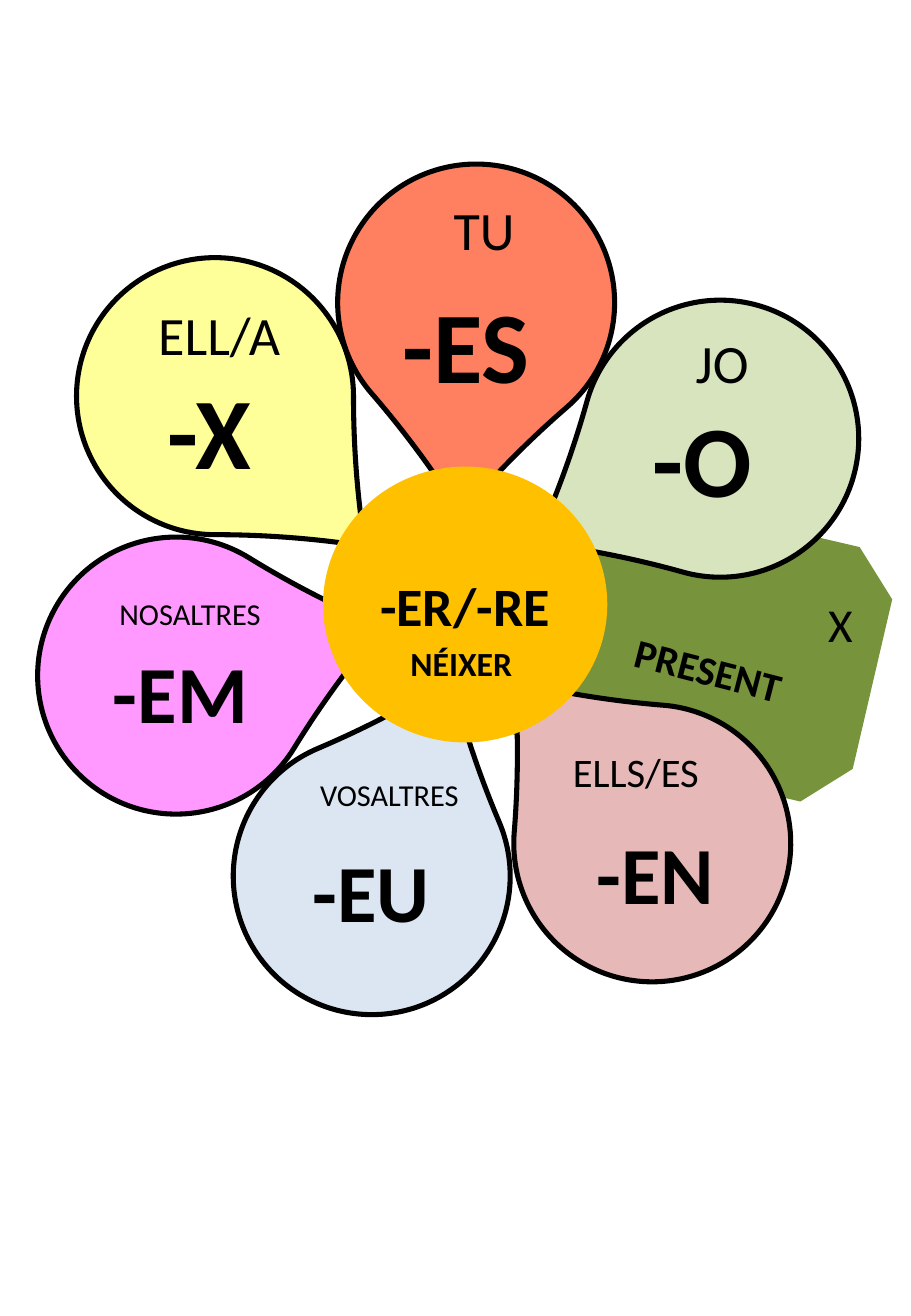
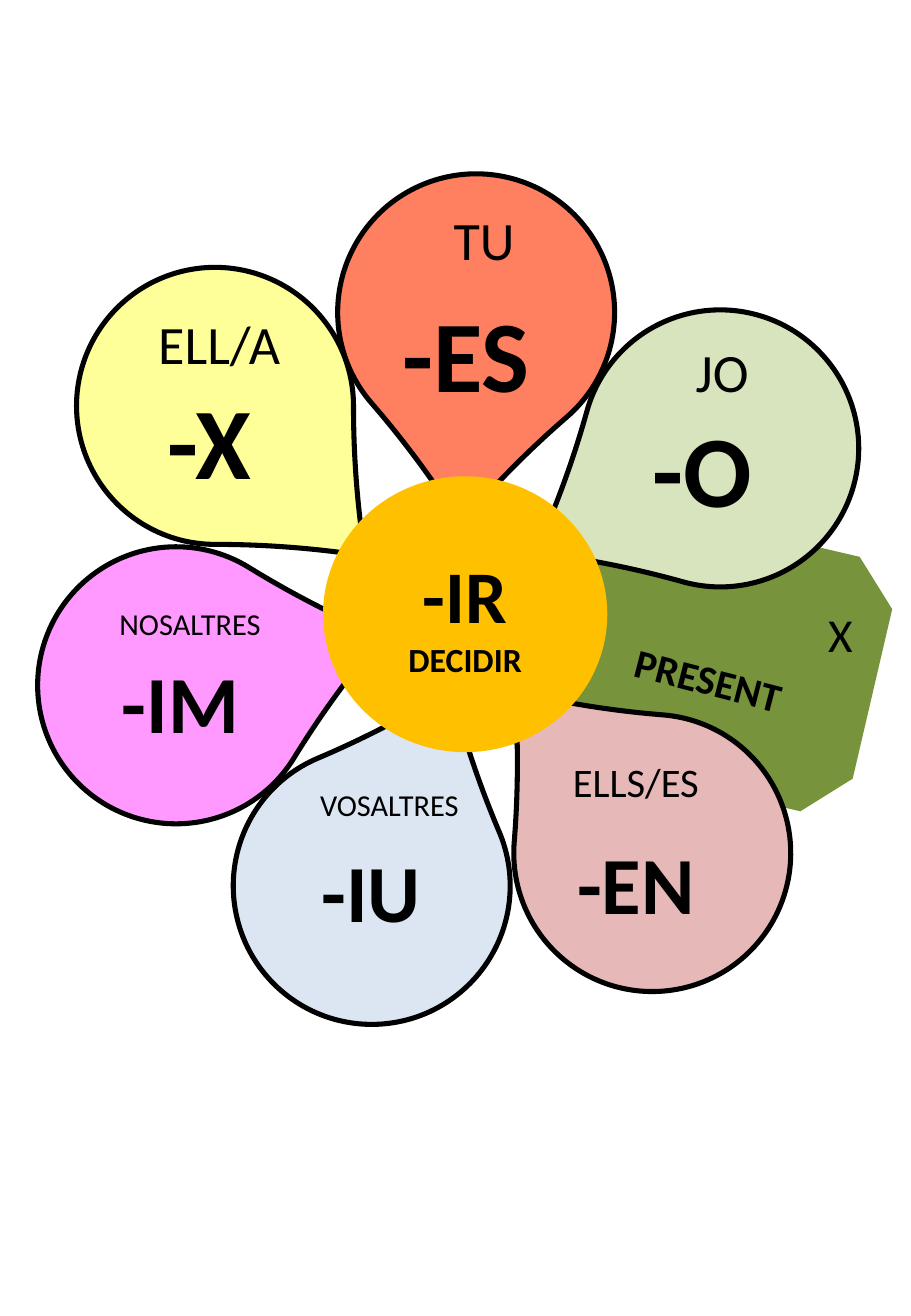
from collections import namedtuple

from lxml import etree
from pptx import Presentation
from pptx import util as u
from pptx.dml.color import RGBColor
from pptx.enum import shapes, text
from pptx.oxml.ns import qn

PX = 9144  # 100 px to the inch
FONT = "Calibri"
BLACK = RGBColor(0x00, 0x00, 0x00)
CORAL = RGBColor(0xFF, 0x33, 0x00)
SAGE = RGBColor(0xD7, 0xE4, 0xBD)
LEMON = RGBColor(0xFF, 0xFF, 0x99)
PINK = RGBColor(0xFF, 0x99, 0xFF)
SKY = RGBColor(0xDC, 0xE6, 0xF2)
ROSE = RGBColor(0xE6, 0xB9, 0xB8)
GREEN = RGBColor(0x77, 0x93, 0x3C)
GOLD = RGBColor(0xFF, 0xC0, 0x00)

KIND = shapes.MSO_SHAPE
MID = text.PP_ALIGN.CENTER
PETAL = 228
LABEL = 141

Petal = namedtuple("Petal", "fill alpha spot turn name name_at name_size end_at end_size")
PETALS = [
    Petal(CORAL, 62, (278, 135), 139.1, "TU", (328, 157), 32, (313, 227), 60),
    Petal(SAGE, 100, (479, 247), 195.6, "JO", (524, 266), 32, (508, 321), 60),
    Petal(LEMON, 100, (63, 212), 90, "ELL/A", (110, 243), 32, (102, 298), 60),
    Petal(PINK, 100, (31, 442), 31.6, "NOSALTRES", (86, 485), 18, (78, 524), 48),
    Petal(SKY, 100, (192, 607), 337, "VOSALTRES", (250, 634), 18, (235, 688), 48),
    Petal(ROSE, 100, (423, 580), 274.6, "ELLS/ES", (453, 610), 24, (469, 673), 48),
]


def emu(*vals):
    return [u.Emu(v * PX) for v in vals]


def add_form(group, kind, box, fill, turn=0, adj=(), edge=0, alpha=100):
    form = group.shapes.add_shape(kind, *emu(*box))
    form.shadow.inherit = False
    form.rotation = turn
    for i, val in enumerate(adj):
        form.adjustments[i] = val
    form.fill.solid()
    form.fill.fore_color.rgb = fill
    if alpha < 100:
        color = form._element.spPr.find(qn("a:solidFill"))[0]
        etree.SubElement(color, qn("a:alpha")).set("val", str(alpha * 1000))
    if edge:
        form.line.color.rgb = BLACK
        form.line.width = u.Pt(edge)
    else:
        form.line.fill.background()
    return form


def write(frame, lines, align=MID):
    """Fill a frame with (words, size, bold) lines."""
    for i, (words, size, bold) in enumerate(lines):
        para = frame.add_paragraph() if i else frame.paragraphs[0]
        para.alignment = align
        run = para.add_run()
        run.text = words
        look = {"name": FONT, "size": u.Pt(size), "bold": bold}
        for key, val in look.items():
            setattr(run.font, key, val)
        run.font.color.rgb = BLACK


def add_label(group, words, spot, size, bold=False, width=LABEL, wrap=True, turn=0):
    high = round(size * 100 / 60) + 10  # one line plus insets
    box = group.shapes.add_textbox(*emu(*spot, width, high))
    box.rotation = turn
    box.text_frame.word_wrap = wrap
    write(box.text_frame, [(words, size, bold)], MID if wrap else text.PP_ALIGN.LEFT)


def add_flower(deck, heart, ends, shift=0, nudge=None, verb=None):
    """Draw one verb flower; nudge moves single endings by (dx, dy)."""
    slide = deck.slides.add_slide(deck.slide_layouts[6])
    group = slide.shapes.add_group_shape()
    add_form(group, KIND.SNIP_2_SAME_RECTANGLE, (471, 387, 215, 287), GREEN,
             103.1, (0.167, 0.041))
    for p in PETALS:
        add_form(group, KIND.TEAR, (*p.spot, PETAL, PETAL), p.fill, p.turn,
                 (1.083,), 3, p.alpha)
    core = add_form(group, KIND.OVAL, (266, 384, 234, 227), GOLD)
    core.text_frame.vertical_anchor = text.MSO_ANCHOR.MIDDLE
    write(core.text_frame, heart)

    for p, end in zip(PETALS, ends):
        dx, dy = (nudge or {}).get(end, (0, 0))
        x, y = p.end_at
        add_label(group, p.name, p.name_at, p.name_size)
        add_label(group, end, (x + dx, y + dy), p.end_size, True)

    add_label(group, "PRESENT", (512, 526), 24, True, 144, False, 14.4)
    add_label(group, "X", (672, 485), 28, False, 41, False)
    if verb:
        add_label(group, verb, (328, 524), 20, True, 105, False)
    group.top += u.Emu(shift * PX)


def main():
    deck = Presentation()
    deck.slide_width, deck.slide_height = emu(750, 1083)
    add_flower(deck, [("-ER/-RE", 32, True)],
               ["-ES", "-O", "-X", "-EM", "-EU", "-EN"], verb="NÉIXER")
    add_flower(deck, [("-IR", 44, True), ("DECIDIR", 20, True)],
               ["-ES", "-O", "-X", "-IM", "-IU", "-EN"], shift=8,
               nudge={"-IU": (0, -8), "-EN": (-16, 0)})
    deck.save("out.pptx")


if __name__ == "__main__":
    main()
